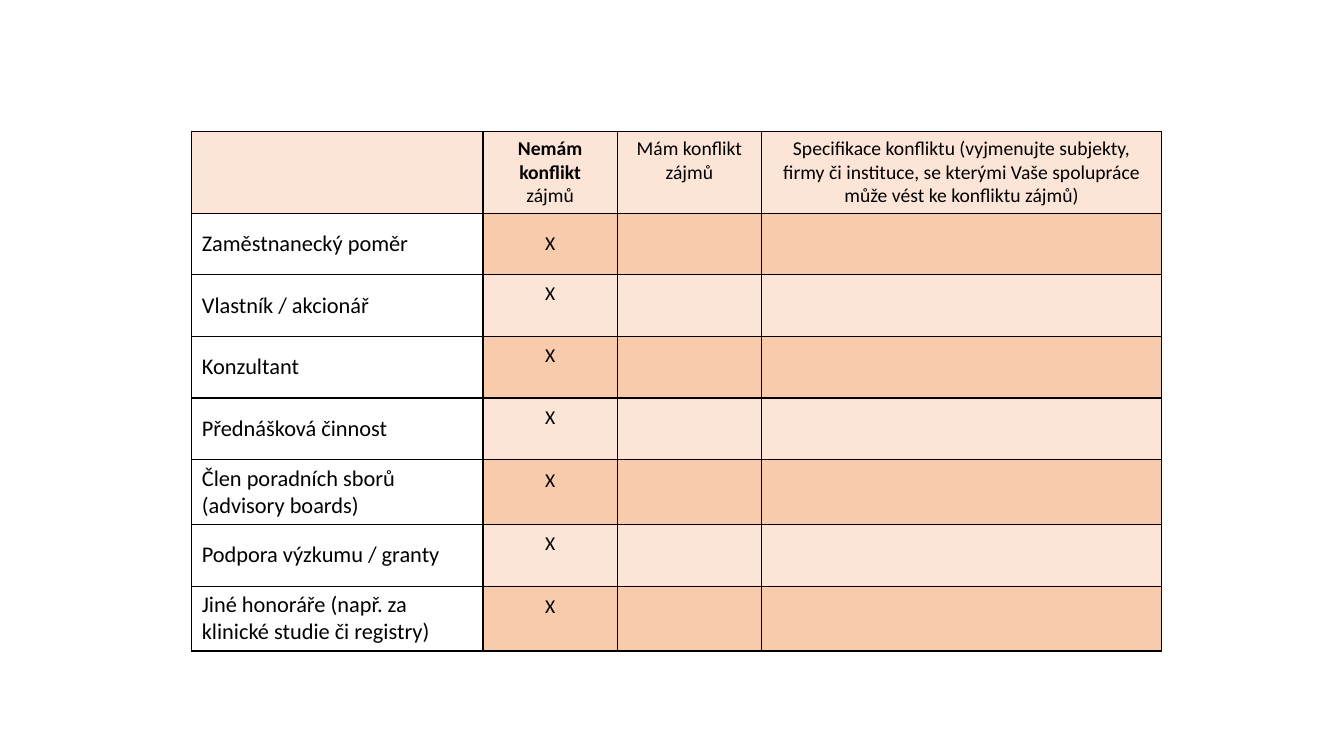
from lxml.etree import SubElement
from pptx import Presentation
from pptx.dml.color import RGBColor
from pptx.enum.text import MSO_ANCHOR, PP_ALIGN
from pptx.oxml.ns import qn
from pptx.util import Pt

COLORS = {"text": "000000", "border": "000000", "label": "FFFFFF",
          "light": "FCE4D6", "dark": "F8CBAD"}
COL_WIDTHS = [208, 96, 103, 286]
ROW_HEIGHT = 44
HEADER = ["", "Nemám konflikt\nzájmů", "Mám konflikt zájmů",
          "Specifikace konfliktu (vyjmenujte subjekty, firmy či instituce, "
          "se kterými Vaše spolupráce může vést ke konfliktu zájmů)"]
RELATIONS = ["Zaměstnanecký poměr", "Vlastník / akcionář", "Konzultant",
             "Přednášková činnost", "Člen poradních sborů (advisory boards)",
             "Podpora výzkumu / granty",
             "Jiné honoráře (např. za klinické studie či registry)"]


def set_borders(cell):
    """Draw a 1 pt line on all four sides; call before setting the fill."""
    tcPr = cell._tc.get_or_add_tcPr()
    for side in ("a:lnL", "a:lnR", "a:lnT", "a:lnB"):
        ln = SubElement(tcPr, qn(side), w=str(Pt(1)))
        fill = SubElement(ln, qn("a:solidFill"))
        SubElement(fill, qn("a:srgbClr"), val=COLORS["border"])


prs = Presentation()
prs.slide_width, prs.slide_height = Pt(960), Pt(540)
s = prs.slides.add_slide(prs.slide_layouts[6])

rows = [HEADER] + [[relation, "X", "", ""] for relation in RELATIONS]
table = s.shapes.add_table(len(rows), len(COL_WIDTHS), Pt(137), Pt(94),
                           Pt(sum(COL_WIDTHS)), Pt(ROW_HEIGHT * len(rows))).table
table.first_row = table.horz_banding = False
for column, width in zip(table.columns, COL_WIDTHS):
    column.width = Pt(width)

for i, texts in enumerate(rows):
    table.rows[i].height = Pt(ROW_HEIGHT)
    for j, text in enumerate(texts):
        cell = table.cell(i, j)
        is_label = i > 0 and j == 0
        set_borders(cell)
        cell.fill.solid()
        shade = "label" if is_label else "dark" if i % 2 else "light"
        cell.fill.fore_color.rgb = RGBColor.from_string(COLORS[shade])
        if i > 0:
            cell.vertical_anchor = MSO_ANCHOR.MIDDLE
        if i > 1 and j == 1:
            cell.margin_bottom = Pt(20)  # lifts the X above the middle
        cell.text_frame.text = text
        for p in cell.text_frame.paragraphs:
            p.alignment = PP_ALIGN.LEFT if is_label else PP_ALIGN.CENTER
            for r in p.runs:
                r.font.name = "Calibri"
                r.font.size = Pt(16 if is_label else 14)
                r.font.bold = False
                r.font.color.rgb = RGBColor.from_string(COLORS["text"])

table.cell(0, 1).text_frame.paragraphs[0].runs[0].font.bold = True

prs.save("out.pptx")
